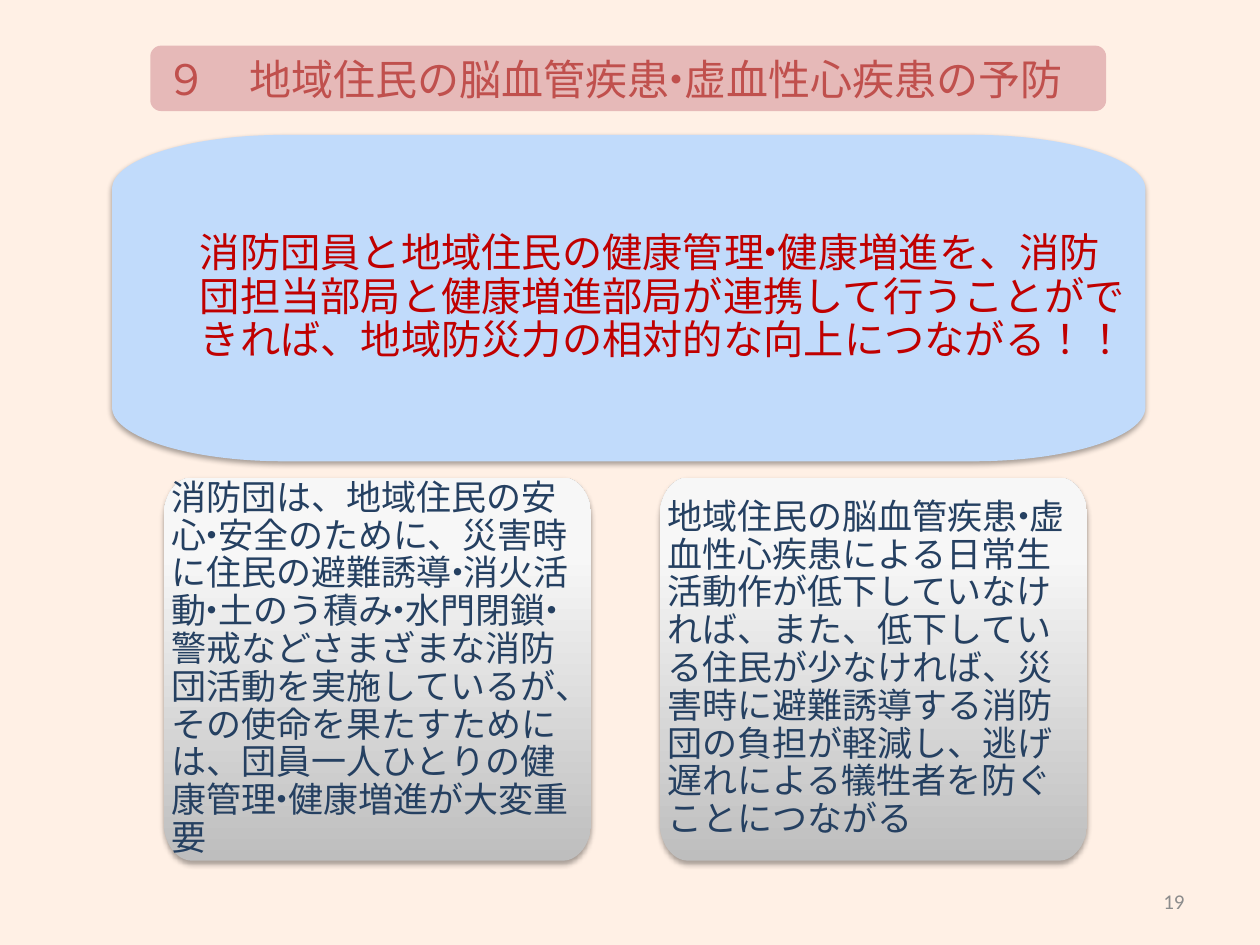
from copy import deepcopy
from dataclasses import dataclass

from lxml.etree import SubElement
from pptx import Presentation
from pptx.dml.color import RGBColor
from pptx.enum.lang import MSO_LANGUAGE_ID as Lang
from pptx.enum.shapes import MSO_SHAPE as Shape
from pptx.enum.text import MSO_ANCHOR as Anchor, PP_ALIGN as Align
from pptx.oxml.ns import qn
from pptx.util import Cm, Pt


@dataclass(frozen=True)
class Theme:
    font: str = "Calibri"
    background: str = "FFF0E5"
    title_fill: str = "E6B9B8"
    title_text: str = "C0504D"
    message_fill: str = "C1DBFB"
    message_text: str = "C00000"
    card_stops: tuple = ((0, "BEBEBE"), (0.8, "F7F7F7"), (1, "F8F8F8"))
    card_text: str = "254061"
    number_text: str = "8C8C8C"
    title_size: int = 24
    message_size: int = 23
    card_size: int = 20
    number_size: int = 12


THEME = Theme()
DOT = "・"
DOT_TIGHTENING = -0.33  # share of the type size, on each side of a dot

TITLE = "９　地域住民の脳血管疾患・虚血性心疾患の予防"
MESSAGE = (
    "消防団員と地域住民の健康管理・健康増進を、消防",
    "団担当部局と健康増進部局が連携して行うことがで",
    "きれば、地域防災力の相対的な向上につながる！！",
)
CARDS = (
    "消防団は、地域住民の安心・安全のために、災害時に住民の避難誘導・消火活動・"
    "土のう積み・水門閉鎖・警戒などさまざまな消防団活動を実施しているが、"
    "その使命を果たすためには、団員一人ひとりの健康管理・健康増進が大変重要",
    "地域住民の脳血管疾患・虚血性心疾患による日常生活動作が低下していなければ、"
    "また、低下している住民が少なければ、災害時に避難誘導する消防団の負担が軽減し、"
    "逃げ遅れによる犠牲者を防ぐことにつながる",
)


def color(value):
    return RGBColor.from_string(value)


def split_at_dots(line):
    """Yield (text, tight); a tight piece is a dot with its two neighbours."""
    pieces = line.split(DOT)
    last = len(pieces) - 1
    for index, piece in enumerate(pieces):
        start = 1 if index else 0
        end = len(piece) - (1 if index < last else 0)
        yield piece[start:end], False
        if index < last:
            yield piece[-1] + DOT + pieces[index + 1][0], True


def add_span(para, text, size, text_color, tight):
    span = para.add_run()
    span.text = text
    span.font.name = THEME.font
    span.font.size = Pt(size)
    span.font.color.rgb = color(text_color)
    span.font.language_id = Lang.JAPANESE
    properties = span.font._element
    SubElement(properties, qn("a:ea"), typeface=THEME.font)
    if tight:
        properties.set("spc", str(round(DOT_TIGHTENING * size * 100)))


def write_text(box, lines, size, text_color, align=Align.LEFT):
    """Write the lines as one paragraph, with a line break between them."""
    frame = box.text_frame
    frame.word_wrap = True
    frame.vertical_anchor = Anchor.MIDDLE
    para = frame.paragraphs[0]
    para.alignment = align
    for index, line in enumerate(lines):
        if index:
            para.add_line_break()
        for text, tight in split_at_dots(line):
            add_span(para, text, size, text_color, tight)
    return para


def add_soft_shadow(box):
    box.shadow.inherit = False
    effects = box._element.spPr.find(qn("a:effectLst"))
    shadow = SubElement(effects, qn("a:outerShdw"), blurRad=str(Pt(3.1)),
                        dist=str(Pt(1.8)), dir="5400000", rotWithShape="0")
    tint = SubElement(shadow, qn("a:srgbClr"), val="000000")
    SubElement(tint, qn("a:alpha"), val="35000")


def round_corners(panel):
    """Turn every second segment of the outline into a quarter ellipse."""
    segments = list(panel._element.spPr.iter(qn("a:moveTo"), qn("a:lnTo")))
    points = [(int(segment[0].get("x")), int(segment[0].get("y")))
              for segment in segments]
    for index in range(1, len(points), 2):
        begin, end = points[index - 1], points[index]
        upright = index % 4 == 1
        corner = (begin[0], end[1]) if upright else (end[0], begin[1])
        controls = [[round(p + 0.55 * (c - p)) for p, c in zip(point, corner)]
                    for point in (begin, end)]
        line = segments[index]
        curve = line.makeelement(qn("a:cubicBezTo"))
        for x, y in (*controls, end):
            SubElement(curve, qn("a:pt"), x=str(x), y=str(y))
        line.getparent().replace(line, curve)


def add_panel(page, left, top, width, height, radius_x, radius_y):
    """Draw a rectangle with elliptical corners and a soft shadow."""
    right, bottom = left + width, top + height
    outline = [(Cm(x), Cm(y)) for x, y in (
        (left, top + radius_y), (left + radius_x, top),
        (right - radius_x, top), (right, top + radius_y),
        (right, bottom - radius_y), (right - radius_x, bottom),
        (left + radius_x, bottom), (left, bottom - radius_y),
    )]
    builder = page.shapes.build_freeform(*outline[0])
    builder.add_line_segments(outline[1:], close=True)
    panel = builder.convert_to_shape()
    round_corners(panel)
    panel.line.fill.background()
    add_soft_shadow(panel)
    frame = panel.text_frame
    frame.margin_left = frame.margin_right = Cm(0.15)
    frame.margin_top = frame.margin_bottom = Cm(0.13)
    return panel


def fill_gradient(box, stops):
    """Fill from bottom to top."""
    box.fill.gradient()
    box.fill.gradient_angle = 90
    stop_list = box._element.spPr.find(qn("a:gradFill")).find(qn("a:gsLst"))
    stop_list.append(deepcopy(stop_list[-1]))
    for stop, (position, value) in zip(box.fill.gradient_stops, stops):
        stop.position = position
        stop.color.rgb = color(value)


def add_title(page):
    bar = page.shapes.add_shape(Shape.ROUNDED_RECTANGLE,
                                Cm(3.03), Cm(0.92), Cm(19.27), Cm(1.32))
    bar.shadow.inherit = False
    bar.fill.solid()
    bar.fill.fore_color.rgb = color(THEME.title_fill)
    bar.line.fill.background()
    write_text(bar, [TITLE], THEME.title_size, THEME.title_text)


def add_message(page):
    panel = add_panel(page, 2.26, 2.72, 20.83, 6.58, 3.47, 1.09)
    panel.fill.solid()
    panel.fill.fore_color.rgb = color(THEME.message_fill)
    para = write_text(panel, MESSAGE, THEME.message_size, THEME.message_text)
    para.line_spacing = 0.9
    para._p.get_or_add_pPr().set("marL", str(Cm(1.62)))


def add_card(page, left, text):
    panel = add_panel(page, left, 9.63, 8.62, 7.72, 0.57, 0.79)
    fill_gradient(panel, THEME.card_stops)
    para = write_text(panel, [text], THEME.card_size, THEME.card_text)
    para.line_spacing = 0.9


def add_page_number(page):
    box = page.shapes.add_textbox(Cm(18.21), Cm(17.65), Cm(5.92), Cm(1.02))
    write_text(box, ["19"], THEME.number_size, THEME.number_text, Align.RIGHT)


def main():
    deck = Presentation()
    deck.slide_width, deck.slide_height = Cm(25.4), Cm(19.05)
    page = deck.slides.add_slide(deck.slide_layouts[6])
    page.background.fill.solid()
    page.background.fill.fore_color.rgb = color(THEME.background)

    # Heading and page number
    add_title(page)
    add_page_number(page)

    # Main message
    add_message(page)

    # Two reasons side by side
    for index, text in enumerate(CARDS):
        add_card(page, 3.3 + index * 10, text)

    deck.save("out.pptx")


if __name__ == "__main__":
    main()
